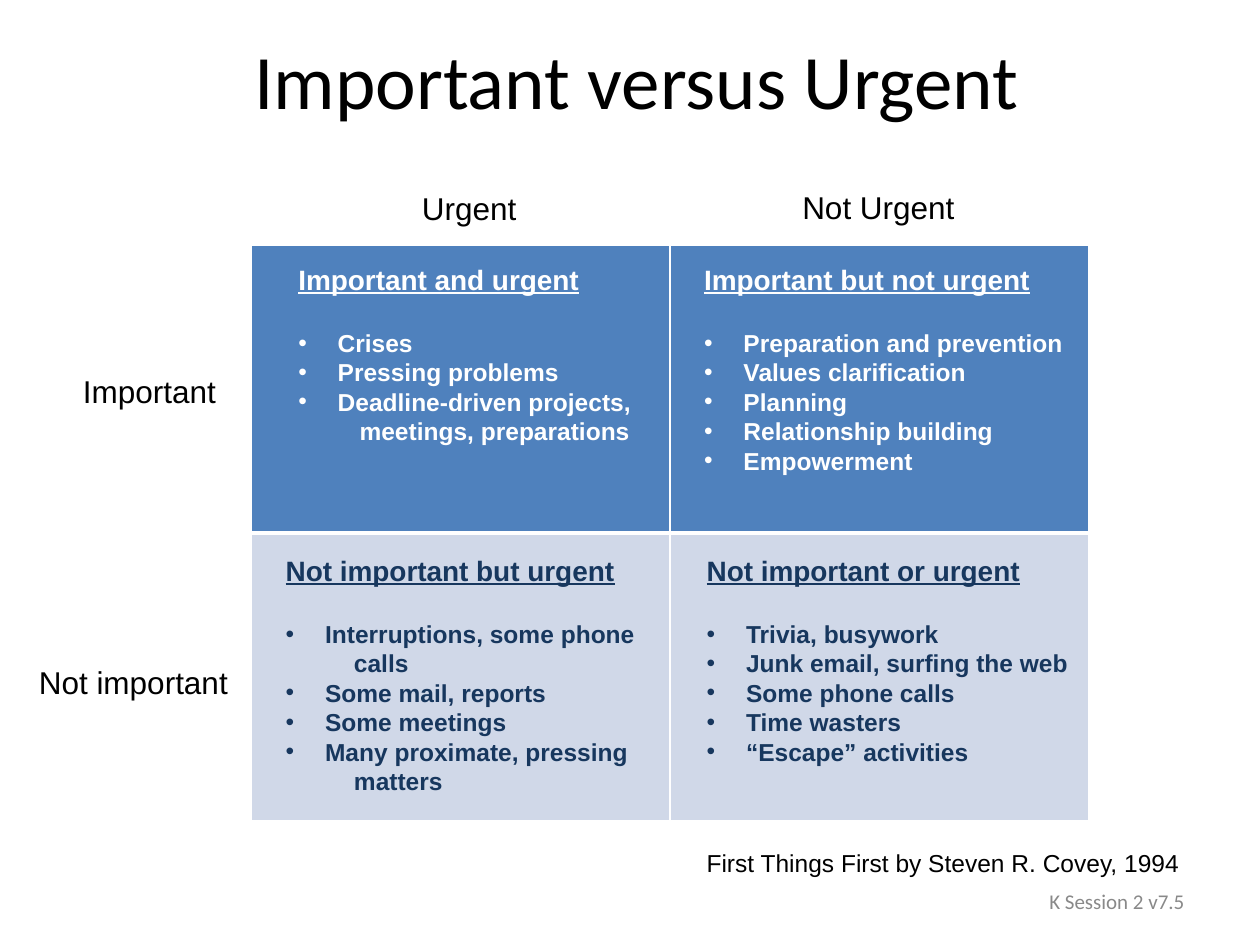
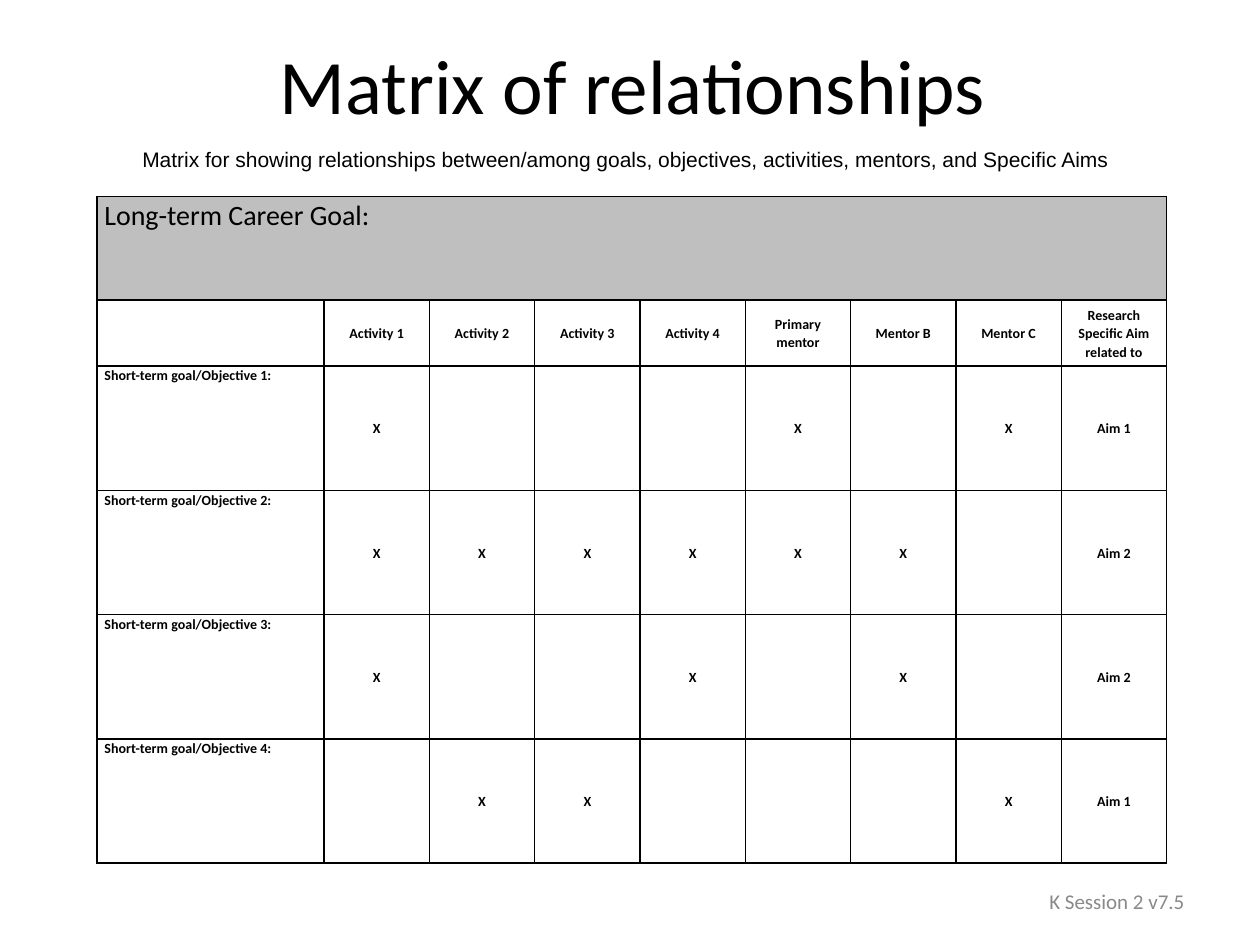
import pptx
import pptx.dml.color
import pptx.enum.text
import pptx.oxml.ns
import pptx.util
from lxml import etree

Pt = pptx.util.Pt
RGB = pptx.dml.color.RGBColor.from_string
ALIGN = pptx.enum.text.PP_ALIGN
ANCHOR = pptx.enum.text.MSO_ANCHOR
qn = pptx.oxml.ns.qn

COLORS = {
    "text": "000000",
    "white": "FFFFFF",
    "blue": "4F81BD",
    "pale": "D0D8E8",
    "navy": "17375E",
    "gray": "BFBFBF",
    "footer": "898989",
}


def add_box(page, at, wrap=False, anchor=ANCHOR.TOP):
    frame = page.shapes.add_textbox(*[Pt(length) for length in at]).text_frame
    frame.word_wrap = wrap
    frame.vertical_anchor = anchor
    if anchor == ANCHOR.TOP:
        frame.auto_size = pptx.enum.text.MSO_AUTO_SIZE.SHAPE_TO_FIT_TEXT
    return frame


def write(frame, text, size=18, color="text", font="Arial", bold=False, underline=False,
          align=ALIGN.LEFT, spacing=None, before=0, indent=0, bullet=False):
    para = frame.add_paragraph() if frame.text else frame.paragraphs[0]
    if indent:
        props = para._p.get_or_add_pPr()
        props.set("marL", str(Pt(indent)))
        props.set("indent", str(Pt(-indent if bullet else 0)))
        if bullet:
            etree.SubElement(props, qn("a:buFont"), typeface="Arial")
            etree.SubElement(props, qn("a:buChar"), char="•")
    para.alignment = align
    if spacing:
        para.line_spacing = spacing
    if before:
        para.space_before = Pt(before)
    span = para.add_run()
    span.text = text
    span.font.name = font
    span.font.size = Pt(size)
    span.font.bold = bold
    span.font.underline = underline
    span.font.color.rgb = RGB(COLORS[color])


deck = pptx.Presentation()
deck.slide_width, deck.slide_height = Pt(720), Pt(540)

pages = []
for title, left, top in [("Important versus Urgent", 40, 0), ("Matrix of relationships", 37.5, 3)]:
    page = deck.slides.add_slide(deck.slide_layouts[6])
    frame = add_box(page, (left, top, 648, 90), wrap=True, anchor=ANCHOR.MIDDLE)
    write(frame, title, size=44, font="Calibri", align=ALIGN.CENTER)
    frame = add_box(page, (456, 500.4, 228, 28.8), wrap=True, anchor=ANCHOR.MIDDLE)
    write(frame, "K Session 2 v7.5", size=12, color="footer", font="Calibri", align=ALIGN.RIGHT)
    pages.append(page)
urgency_page, matrix_page = pages

urgency = urgency_page.shapes.add_table(2, 2, Pt(143.4), Pt(140.4), Pt(479), Pt(328.4)).table
for row, fill in zip(urgency.rows, ["blue", "pale"]):
    row.height = Pt(164.2)
    for cell in row.cells:
        cell.fill.solid()
        cell.fill.fore_color.rgb = RGB(COLORS[fill])

axis_labels = [
    ("Urgent", (234, 104.4, 69, 29)),
    ("Not Urgent", (451.4, 103.7, 102, 29)),
    ("Important", (40.3, 208.8, 91.4, 29)),
    ("Not important", (15.1, 375.1, 124, 29)),
]
for label, at in axis_labels:
    write(add_box(urgency_page, at), label)

quadrants = [
    ("Important and urgent", (163.4, 146.2, 211.7, 113.8), "white", 35,
     ["Crises", "Pressing problems", "Deadline-driven projects,", "meetings, preparations"]),
    ("Important but not urgent", (395.3, 146.2, 244, 131), "white", 35,
     ["Preparation and prevention", "Values clarification", "Planning",
      "Relationship building", "Empowerment"]),
    ("Not important but urgent", (156.2, 312.5, 218.9, 147.6), "navy", 39,
     ["Interruptions, some phone", "calls", "Some mail, reports", "Some meetings",
      "Many proximate, pressing", "matters"]),
    ("Not important or urgent", (396.7, 312.5, 221.8, 131), "navy", 39,
     ["Trivia, busywork", "Junk email, surfing the web", "Some phone calls",
      "Time wasters", "“Escape” activities"]),
]
for heading, at, color, continuation, items in quadrants:
    frame = add_box(urgency_page, at, wrap=at[2] > 240)
    write(frame, heading, size=16, color=color, bold=True, underline=True)
    for index, item in enumerate(items):
        starts_item = not item[0].islower()
        write(frame, item, size=14, color=color, bold=True, bullet=starts_item,
              indent=22.5 if starts_item else continuation, before=0 if index else 18.4)

write(add_box(urgency_page, (396.7, 481, 285.8, 24.5)),
      "First Things First by Steven R. Covey, 1994", size=14)

write(add_box(matrix_page, (74.2, 80, 574.6, 21.6)),
      "Matrix for showing relationships between/among goals, objectives, activities, "
      "mentors, and Specific Aims", size=12)

matrix_rows = [
    ["Long-term Career Goal:"] + [""] * 8,
    ["", "Activity 1", "Activity 2", "Activity 3", "Activity 4", "Primary mentor",
     "Mentor B", "Mentor C", "Research Specific Aim related to"],
]
objectives = [("X---X-X", "Aim 1"), ("XXXXXX-", "Aim 2"), ("X--X-X-", "Aim 2"), ("-XX---X", "Aim 1")]
for number, (marks, aim) in enumerate(objectives, 1):
    matrix_rows.append([f"Short-term goal/Objective {number}:", *marks.replace("-", " "), aim])

matrix = matrix_page.shapes.add_table(6, 9, Pt(55.4), Pt(112.3), Pt(611.4), Pt(381)).table
for index, column in enumerate(matrix.columns):
    column.width = Pt(60.2 if index else 129.8)
for row, height in zip(matrix.rows, [59.2, 37.8] + [71] * 4):
    row.height = Pt(height)
matrix.cell(0, 0).merge(matrix.cell(0, 8))
for row_index, values in enumerate(matrix_rows):
    for column_index, value in enumerate(values):
        cell = matrix.cell(row_index, column_index)
        cell.fill.solid()
        cell.fill.fore_color.rgb = RGB(COLORS["white" if row_index else "gray"])
        cell.margin_left = cell.margin_right = Pt(4.3)
        cell.margin_top = cell.margin_bottom = 0
        cell.vertical_anchor = ANCHOR.MIDDLE if column_index else ANCHOR.TOP
        if value.strip():
            write(cell.text_frame, value, size=8 if row_index else 16, font="Calibri",
                  bold=row_index > 0, spacing=1.07,
                  align=ALIGN.CENTER if column_index else ALIGN.LEFT)

for grid, color, divider in [(urgency, "white", 3), (matrix, "text", 1)]:
    grid.first_row = grid.horz_banding = False
    for row_index, row in enumerate(grid.rows):
        widths = {"L": 1, "R": 1, "T": divider if row_index else 1, "B": 1 if row_index else divider}
        for cell in row.cells:
            props = cell._tc.get_or_add_tcPr()
            for position, (side, width) in enumerate(widths.items()):
                line = etree.Element(qn(f"a:ln{side}"), w=str(Pt(width)))
                fill = etree.SubElement(line, qn("a:solidFill"))
                etree.SubElement(fill, qn("a:srgbClr"), val=COLORS[color])
                props.insert(position, line)

deck.save("out.pptx")
